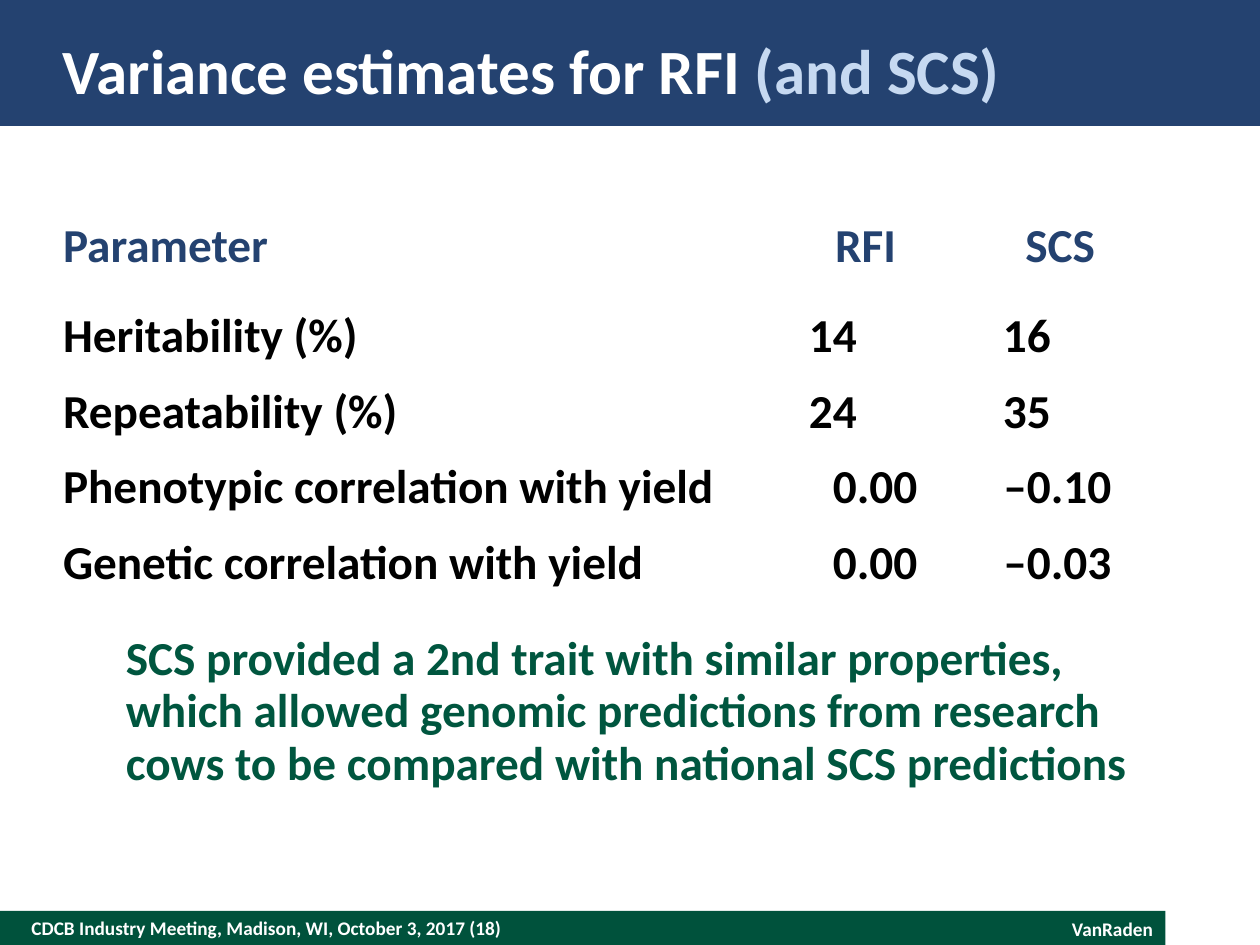
from lxml import etree
from pptx import Presentation
from pptx.dml.color import RGBColor
from pptx.enum.shapes import MSO_SHAPE as Shape
from pptx.enum.text import MSO_ANCHOR as Anchor, PP_ALIGN as Align
from pptx.oxml.ns import qn
from pptx.util import Inches, Pt

NAVY = RGBColor(0x24, 0x42, 0x70)
FOOTER_GREEN = RGBColor(0x00, 0x52, 0x3C)
NOTE_GREEN = RGBColor(0x00, 0x56, 0x3F)
PALE_BLUE = RGBColor(0xC6, 0xD9, 0xF1)
WHITE = RGBColor(0xFF, 0xFF, 0xFF)
BLACK = RGBColor(0x00, 0x00, 0x00)

ROWS = [
    ("Parameter", "RFI", "SCS"),
    ("Heritability (%)", "14", "16"),
    ("Repeatability (%)", "24", "35"),
    ("Phenotypic correlation with yield", "0.00", "–0.10"),
    ("Genetic correlation with yield", "0.00", "–0.03"),
]
COLUMN_WIDTHS = (5.8, 1.14, 1.95)
DECIMAL_TABS = (None, 0.5, 0.9)
HEADER_HEIGHT, ROW_HEIGHT = 0.72, 0.6


def style_span(span, size, color):
    span.font.name = "Calibri"
    span.font.size = Pt(size)
    span.font.bold = True
    span.font.color.rgb = color


def add_bar(page, left, top, width, height, color):
    bar = page.shapes.add_shape(
        Shape.RECTANGLE, Inches(left), Inches(top), Inches(width), Inches(height))
    bar.shadow.inherit = False
    bar.fill.solid()
    bar.fill.fore_color.rgb = color
    bar.line.fill.background()


def add_text(page, left, top, width, height, spans, size, inset=True):
    """Add a one-paragraph box from (text, color) spans and return the paragraph."""
    box = page.shapes.add_textbox(
        Inches(left), Inches(top), Inches(width), Inches(height))
    frame = box.text_frame
    frame.word_wrap = True
    if not inset:
        frame.margin_left = frame.margin_top = 0
        frame.margin_right = frame.margin_bottom = 0
        frame.vertical_anchor = Anchor.MIDDLE
    para = frame.paragraphs[0]
    for text, color in spans:
        span = para.add_run()
        span.text = text
        style_span(span, size, color)
    return para


def add_title(page, left, top, width, height):
    add_bar(page, left, top, width, height, NAVY)
    add_text(page, left + 0.5, top + 0.2, width - 1, 0.7,
             [("Variance estimates for RFI ", WHITE), ("(and SCS)", PALE_BLUE)],
             36, inset=False)


def add_footer(page, left, top, width, height):
    add_bar(page, left, top, width, height, FOOTER_GREEN)
    add_text(page, left + 0.25, top, 7, height,
             [("CDCB Industry Meeting, Madison, WI, October 3, 2017 (18)", WHITE)],
             11, inset=False)
    author = add_text(page, left + width - 2, top, 2, 0.29,
                      [("VanRaden", WHITE)], 11)
    author.alignment = Align.RIGHT


def add_decimal_tab(para, position):
    tabs = etree.SubElement(para._p.get_or_add_pPr(), qn("a:tabLst"))
    etree.SubElement(tabs, qn("a:tab"), pos=str(Inches(position)), algn="dec")


def fill_cell(cell, text, is_header, tab):
    cell.fill.background()
    cell.margin_left = cell.margin_top = cell.margin_right = 0
    cell.margin_bottom = Inches(0.05) if is_header else 0
    para = cell.text_frame.paragraphs[0]
    para.line_spacing = Pt(36)
    if tab and is_header:
        para.alignment = Align.CENTER
    elif tab:
        add_decimal_tab(para, tab)
        text = "\t" + text
    para.text = text
    style_span(para.runs[0], 27, NAVY if is_header else BLACK)


def add_estimates(page, left, top):
    height = HEADER_HEIGHT + ROW_HEIGHT * (len(ROWS) - 1)
    table = page.shapes.add_table(
        len(ROWS), len(COLUMN_WIDTHS), Inches(left), Inches(top),
        Inches(sum(COLUMN_WIDTHS)), Inches(height)).table
    table.first_row = table.horz_banding = False
    for column, width in zip(table.columns, COLUMN_WIDTHS):
        column.width = Inches(width)
    for r, texts in enumerate(ROWS):
        table.rows[r].height = Inches(ROW_HEIGHT if r else HEADER_HEIGHT)
        for c, text in enumerate(texts):
            fill_cell(table.cell(r, c), text, r == 0, DECIMAL_TABS[c])


def add_note(page, left, top, width, height):
    note = add_text(
        page, left, top, width, height,
        [("SCS provided a 2nd trait with similar properties, which allowed "
          "genomic predictions from research cows to be compared with "
          "national SCS predictions", NOTE_GREEN)], 27)
    note.line_spacing = Pt(30)


def main():
    deck = Presentation()
    deck.slide_width, deck.slide_height = Inches(10), Inches(7.5)
    page = deck.slides.add_slide(deck.slide_layouts[6])
    add_footer(page, 0, 7.23, 9.25, 0.27)
    add_title(page, 0, 0, 10, 1)
    add_estimates(page, 0.5, 1.68)
    add_note(page, 0.9, 4.97, 8.19, 1.36)
    deck.save("out.pptx")


if __name__ == "__main__":
    main()
